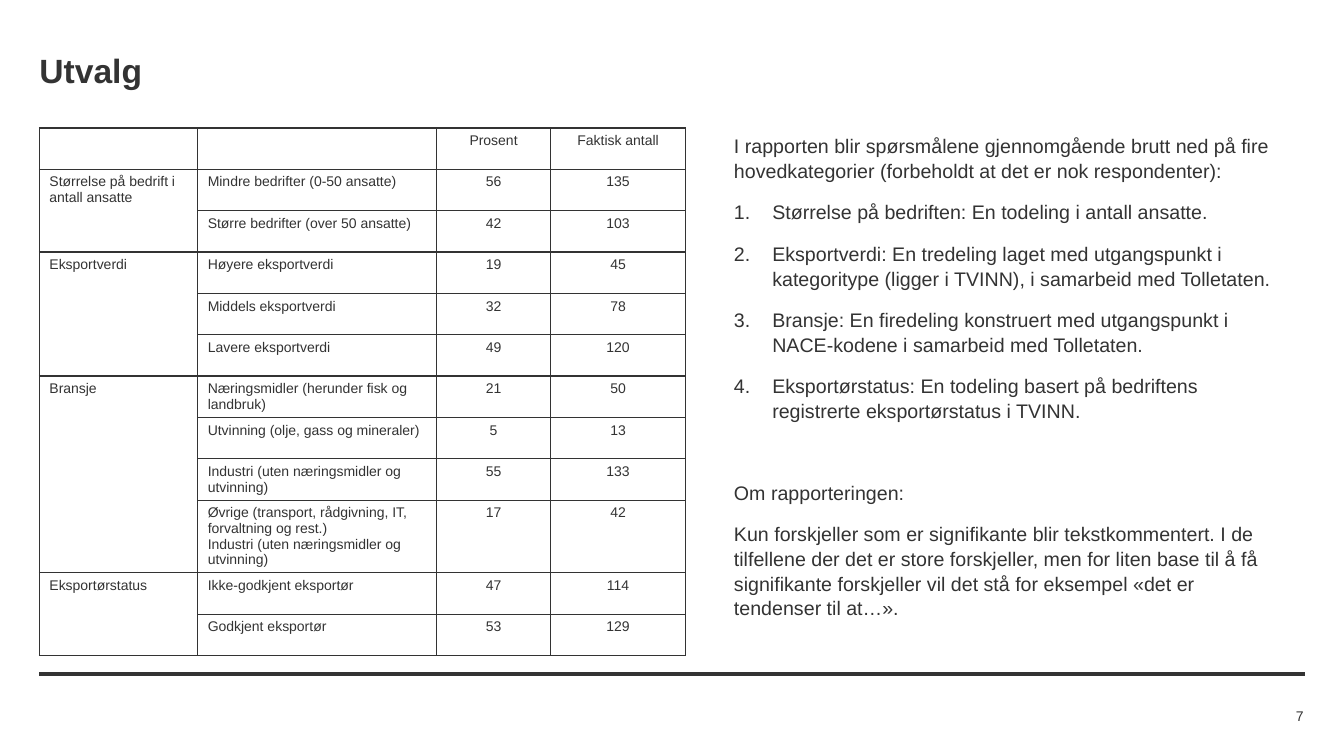
from lxml import etree
from pptx import Presentation
from pptx.dml.color import RGBColor
from pptx.enum.shapes import MSO_CONNECTOR
from pptx.enum.text import MSO_ANCHOR, MSO_AUTO_SIZE, PP_ALIGN
from pptx.oxml.ns import qn
from pptx.util import Inches, Pt

LEFT, MID, RIGHT = PP_ALIGN.LEFT, PP_ALIGN.CENTER, PP_ALIGN.RIGHT
CENTER = MSO_ANCHOR.MIDDLE
TOP = MSO_ANCHOR.TOP
NO_FIT = MSO_AUTO_SIZE.NONE
LINE = MSO_CONNECTOR.STRAIGHT
HEX = {"ink": "333333", "paper": "FFFFFF"}
FONT = "Arial"
WIDE, HIGH = Inches(13.33), Inches(7.5)
EDGE, HEAD = 2.93, 16.93
COLS = [11.78, 17.78, 8.48, 10.05]
ROW = 5.47
INDENT = Inches(0.38)

GROUPS = [
    ("", [("", "Prosent", "Faktisk antall")]),
    ("Størrelse på bedrift i antall ansatte", [
        ("Mindre bedrifter (0-50 ansatte)", "56", "135"),
        ("Større bedrifter (over 50 ansatte)", "42", "103")]),
    ("Eksportverdi", [
        ("Høyere eksportverdi", "19", "45"),
        ("Middels eksportverdi", "32", "78"),
        ("Lavere eksportverdi", "49", "120")]),
    ("Bransje", [
        ("Næringsmidler (herunder fisk og landbruk)", "21", "50"),
        ("Utvinning (olje, gass og mineraler)", "5", "13"),
        ("Industri (uten næringsmidler og utvinning)", "55", "133"),
        ("Øvrige (transport, rådgivning, IT, forvaltning og rest.)\n"
         "Industri (uten næringsmidler og utvinning)", "17", "42")]),
    ("Eksportørstatus", [
        ("Ikke-godkjent eksportør", "47", "114"),
        ("Godkjent eksportør", "53", "129")]),
]
NOTES = [
    ("I rapporten blir spørsmålene gjennomgående brutt ned på fire "
     "hovedkategorier (forbeholdt at det er nok respondenter):", False, 0),
    ("Størrelse på bedriften: En todeling i antall ansatte.", True, 12),
    ("Eksportverdi: En tredeling laget med utgangspunkt i kategoritype "
     "(ligger i TVINN), i samarbeid med Tolletaten.", True, 12),
    ("Bransje: En firedeling konstruert med utgangspunkt i NACE-kodene "
     "i samarbeid med Tolletaten.", True, 12),
    ("Eksportørstatus: En todeling basert på bedriftens registrerte "
     "eksportørstatus i TVINN.", True, 12),
    ("Om rapporteringen:", False, 41),
    ("Kun forskjeller som er signifikante blir tekstkommentert. I de "
     "tilfellene der det er store forskjeller, men for liten base til å få "
     "signifikante forskjeller vil det stå for eksempel "
     "«det er tendenser til at…».", False, 12),
]


def across(share):
    return round(WIDE * share / 100)


def down(share):
    return round(HIGH * share / 100)


def area(x, y, w, h):
    return across(x), down(y), across(w), down(h)


def place(shape, *shares):
    shape.left, shape.top, shape.width, shape.height = area(*shares)


def paint(color, name):
    color.rgb = RGBColor.from_string(HEX[name])


def write(para, text, size, align=LEFT, bold=False):
    para.alignment = align
    run = para.add_run()
    run.text = text
    run.font.name = FONT
    run.font.size = Pt(size)
    run.font.bold = bold
    paint(run.font.color, "ink")


def frame(shape, anchor, inset=True):
    text = shape.text_frame
    text.word_wrap = True
    text.auto_size = NO_FIT
    text.vertical_anchor = anchor
    if not inset:
        text.margin_left = text.margin_right = 0
        text.margin_top = text.margin_bottom = 0
    return text


def border(cell):
    props = cell._tc.get_or_add_tcPr()
    for side in ("lnL", "lnR", "lnT", "lnB"):
        line = etree.SubElement(props, qn("a:" + side), w=str(Pt(1)))
        fill = etree.SubElement(line, qn("a:solidFill"))
        etree.SubElement(fill, qn("a:srgbClr"), val=HEX["ink"])


def fill_cell(cell, text, align=LEFT):
    for num, part in enumerate(text.split("\n") if text else []):
        body = cell.text_frame
        para = body.add_paragraph() if num else body.paragraphs[0]
        write(para, part, 10, align)


def add_grid(slide):
    count = sum(len(rows) for _, rows in GROUPS)
    shape = slide.shapes.add_table(
        count, len(COLS), *area(EDGE, HEAD, sum(COLS), count * ROW))
    table = shape.table
    table.first_row = table.horz_banding = False
    for col, share in zip(table.columns, COLS):
        col.width = across(share)
    for row in table.rows:
        row.height = down(ROW)
    for cell in table.iter_cells():
        border(cell)
        cell.fill.solid()
        paint(cell.fill.fore_color, "paper")
    top = 0
    for label, rows in GROUPS:
        first = table.cell(top, 0)
        if len(rows) > 1:
            first.merge(table.cell(top + len(rows) - 1, 0))
        fill_cell(first, label)
        for num, (name, *counts) in enumerate(rows, top):
            fill_cell(table.cell(num, 1), name)
            for col, value in enumerate(counts, 2):
                fill_cell(table.cell(num, col), value, MID)
        top += len(rows)


def mark(para, listed):
    props = para._p.get_or_add_pPr()
    props.set("marL", str(INDENT if listed else 0))
    props.set("indent", str(-INDENT if listed else 0))
    if listed:
        etree.SubElement(props, qn("a:buAutoNum"), type="arabicPeriod")
    else:
        etree.SubElement(props, qn("a:buNone"))


def add_notes(body):
    place(body, 53.86, HEAD, 42.54, 65.07)
    text = frame(body, TOP)
    for num, (words, listed, gap) in enumerate(NOTES):
        para = text.add_paragraph() if num else text.paragraphs[0]
        mark(para, listed)
        para.space_before = Pt(gap)
        para.line_spacing = 1.05
        write(para, words, 14)


def add_title(title):
    place(title, EDGE, 6.27, 94.07, 5.87)
    para = frame(title, CENTER, False).paragraphs[0]
    para.space_before = Pt(0)
    write(para, "Utvalg", 24, bold=True)


def add_rule(slide):
    y = down(89.2)
    rule = slide.shapes.add_connector(LINE, across(EDGE), y, across(97.07), y)
    paint(rule.line.color, "ink")
    rule.line.width = Pt(3)
    etree.SubElement(rule._element.spPr, qn("a:effectLst"))


def add_page(slide):
    box = slide.shapes.add_textbox(*area(89.05, 93.2, 7.95, 2.93))
    write(frame(box, CENTER, False).paragraphs[0], "7", 10, RIGHT)


def main():
    deck = Presentation()
    deck.slide_width, deck.slide_height = WIDE, HIGH
    slide = deck.slides.add_slide(deck.slide_layouts[1])
    add_rule(slide)
    add_title(slide.shapes.title)
    add_grid(slide)
    add_notes(slide.placeholders[1])
    add_page(slide)
    deck.save("out.pptx")


if __name__ == "__main__":
    main()
